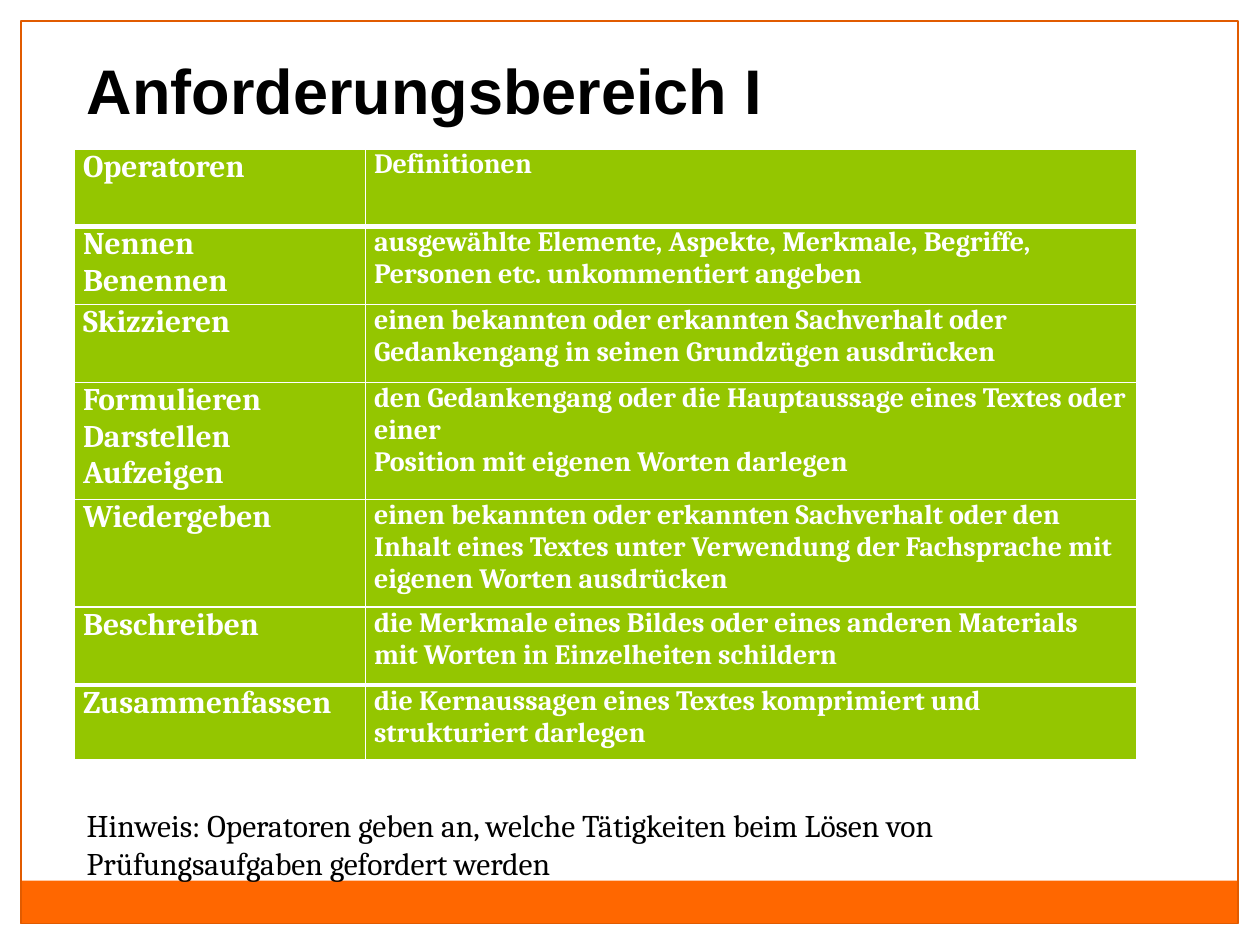
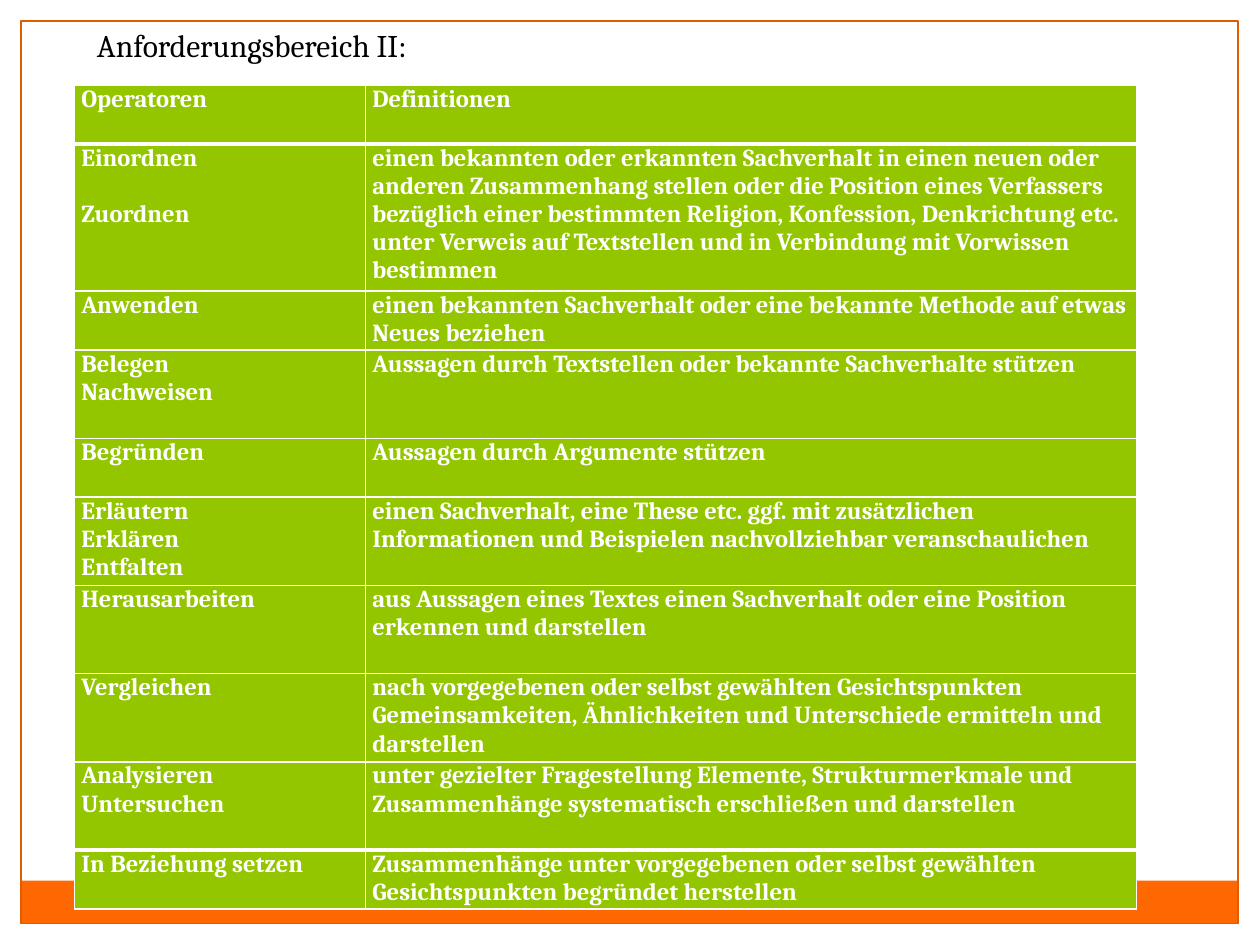
"""Builds two slides that list the operators of requirement levels I and II."""
from lxml import etree
from pptx import Presentation
from pptx.dml.color import RGBColor
from pptx.enum import shapes, text
from pptx.oxml.ns import qn
from pptx.util import Pt

WHITE, GREEN, ORANGE, FRAME, BLACK = "FFFFFF", "94C600", "FF6700", "E15B00", "000000"
TABLE_LEFT = 42.5
COLUMN_WIDTHS = (166.3, 440.6)


def color(hex_code):
    return RGBColor.from_string(hex_code)


def style_text(frame, size, font, hex_code, bold=False):
    for paragraph in frame.paragraphs:
        paragraph.alignment = text.PP_ALIGN.LEFT
        paragraph.font.size = Pt(size)
        paragraph.font.name = font
        paragraph.font.bold = bold
        paragraph.font.color.rgb = color(hex_code)


levels = [
    {
        "title": "Anforderungsbereich I",
        "title_box": (42.5, 25.2, 555.8, 72.7),
        "title_style": (36, "Arial", BLACK, True),
        "anchor": text.MSO_ANCHOR.MIDDLE,
        "bottom_inset": 24.5,
        "wrap": True,
        "table_top": 85,
        "inset": 5,
        "sizes": (18, 16),
        "heights": (44.5, 44.5, 44.5, 67, 61.5, 44.5, 42.5),
        "rows": [
            ("Operatoren", "Definitionen"),
            ("Nennen\nBenennen",
             "ausgewählte Elemente, Aspekte, Merkmale, Begriffe, Personen etc. "
             "unkommentiert angeben"),
            ("Skizzieren",
             "einen bekannten oder erkannten Sachverhalt oder Gedankengang in "
             "seinen Grundzügen ausdrücken"),
            ("Formulieren\nDarstellen\nAufzeigen",
             "den Gedankengang oder die Hauptaussage eines Textes oder einer\n"
             "Position mit eigenen Worten darlegen"),
            ("Wiedergeben",
             "einen bekannten oder erkannten Sachverhalt oder den Inhalt eines "
             "Textes unter Verwendung der Fachsprache mit eigenen Worten ausdrücken"),
            ("Beschreiben",
             "die Merkmale eines Bildes oder eines anderen Materials mit Worten "
             "in Einzelheiten schildern"),
            ("Zusammenfassen",
             "die Kernaussagen eines Textes komprimiert und strukturiert darlegen"),
        ],
    },
    {
        "title": "Anforderungsbereich II:",
        "title_box": (48.2, 11.5, 208.8, 28.8),
        "title_style": (18, "Cambria", BLACK),
        "anchor": text.MSO_ANCHOR.TOP,
        "bottom_inset": 3.6,
        "wrap": False,
        "table_top": 48.7,
        "inset": 4,
        "sizes": (14, 14),
        "heights": (33.7, 84, 33.7, 50.4, 33.7, 50.4, 50.4, 50.4, 50.4, 33.7),
        "rows": [
            ("Operatoren", "Definitionen"),
            ("Einordnen\nZuordnen",
             "einen bekannten oder erkannten Sachverhalt in einen neuen oder anderen "
             "Zusammenhang stellen oder die Position eines Verfassers bezüglich einer "
             "bestimmten Religion, Konfession, Denkrichtung etc. unter Verweis auf "
             "Textstellen und in Verbindung mit Vorwissen bestimmen"),
            ("Anwenden",
             "einen bekannten Sachverhalt oder eine bekannte Methode auf etwas "
             "Neues beziehen"),
            ("Belegen\nNachweisen",
             "Aussagen durch Textstellen oder bekannte Sachverhalte stützen"),
            ("Begründen", "Aussagen durch Argumente stützen"),
            ("Erläutern\nErklären\nEntfalten",
             "einen Sachverhalt, eine These etc. ggf. mit zusätzlichen Informationen "
             "und Beispielen nachvollziehbar veranschaulichen"),
            ("Herausarbeiten",
             "aus Aussagen eines Textes einen Sachverhalt oder eine Position erkennen "
             "und darstellen"),
            ("Vergleichen",
             "nach vorgegebenen oder selbst gewählten Gesichtspunkten Gemeinsamkeiten, "
             "Ähnlichkeiten und Unterschiede ermitteln und darstellen"),
            ("Analysieren\nUntersuchen",
             "unter gezielter Fragestellung Elemente, Strukturmerkmale und "
             "Zusammenhänge systematisch erschließen und darstellen"),
            ("In Beziehung setzen",
             "Zusammenhänge unter vorgegebenen oder selbst gewählten Gesichtspunkten "
             "begründet herstellen"),
        ],
    },
]

prs = Presentation()
prs.slide_width, prs.slide_height = Pt(720), Pt(540)
title_only = prs.slide_layouts[5]
slides = [prs.slides.add_slide(title_only) for level in levels]

master_parts = [
    ((0, 0, 720, 12), WHITE, None),
    ((708, 0, 12, 540), WHITE, None),
    ((0, 0, 12, 540), WHITE, None),
    ((11.7, 503.3, 695.7, 24.5), ORANGE, None),
    ((12, 12, 695.5, 515.7), None, FRAME),
]
for number, (box, fill, line) in enumerate(master_parts):
    part = slides[0].shapes.add_shape(shapes.MSO_SHAPE.RECTANGLE, *map(Pt, box))
    part.shadow.inherit = False
    if fill:
        part.fill.solid()
        part.fill.fore_color.rgb = color(fill)
    else:
        part.fill.background()
    if line:
        part.line.color.rgb = color(line)
        part.line.width = Pt(0.75)
    else:
        part.line.fill.background()
    part.element.nvSpPr.cNvPr.id = 20 + number
    prs.slide_master.shapes.element.append(part.element)

for slide, level in zip(slides, levels):
    title = slide.shapes.title
    title.left, title.top, title.width, title.height = map(Pt, level["title_box"])
    frame = title.text_frame
    frame.text = level["title"]
    frame.auto_size = text.MSO_AUTO_SIZE.NONE
    frame.word_wrap = level["wrap"]
    frame.vertical_anchor = level["anchor"]
    frame.margin_left = frame.margin_right = Pt(7.2)
    frame.margin_top, frame.margin_bottom = Pt(3.6), Pt(level["bottom_inset"])
    style_text(frame, *level["title_style"])

    rows, heights = level["rows"], level["heights"]
    operators = slide.shapes.add_table(
        len(rows), 2, Pt(TABLE_LEFT), Pt(level["table_top"]),
        Pt(sum(COLUMN_WIDTHS)), Pt(sum(heights))).table
    operators.first_row = operators.horz_banding = False
    for column, width in zip(operators.columns, COLUMN_WIDTHS):
        column.width = Pt(width)
    last = len(rows) - 1
    for r, (entry, height) in enumerate(zip(rows, heights)):
        operators.rows[r].height = Pt(height)
        borders = {"lnL": 1, "lnR": 1,
                   "lnT": 3 if r in (1, last) else 1,
                   "lnB": 3 if r in (0, last - 1) else 1}
        for c, wording in enumerate(entry):
            cell = operators.cell(r, c)
            cell.text = wording
            cell.margin_left = cell.margin_right = Pt(level["inset"])
            cell.margin_top = cell.margin_bottom = 0
            cell.fill.solid()
            cell.fill.fore_color.rgb = color(GREEN)
            style_text(cell.text_frame, level["sizes"][c], "Cambria", WHITE, True)
            properties = cell._tc.get_or_add_tcPr()
            for position, (side, width) in enumerate(borders.items()):
                border = etree.Element(qn(f"a:{side}"), w=str(Pt(width)))
                solid = etree.SubElement(border, qn("a:solidFill"))
                etree.SubElement(solid, qn("a:srgbClr"), val=WHITE)
                properties.insert(position, border)

    if level is levels[1]:
        operators.cell(1, 0).text_frame.paragraphs[1].space_before = Pt(16)

hint = slides[0].shapes.add_textbox(Pt(42.5), Pt(457.2), Pt(612), Pt(51)).text_frame
hint.word_wrap = True
hint.text = ("Hinweis: Operatoren geben an, welche Tätigkeiten beim Lösen von "
             "Prüfungsaufgaben gefordert werden")
style_text(hint, 18, "Cambria", BLACK)

prs.save("out.pptx")
